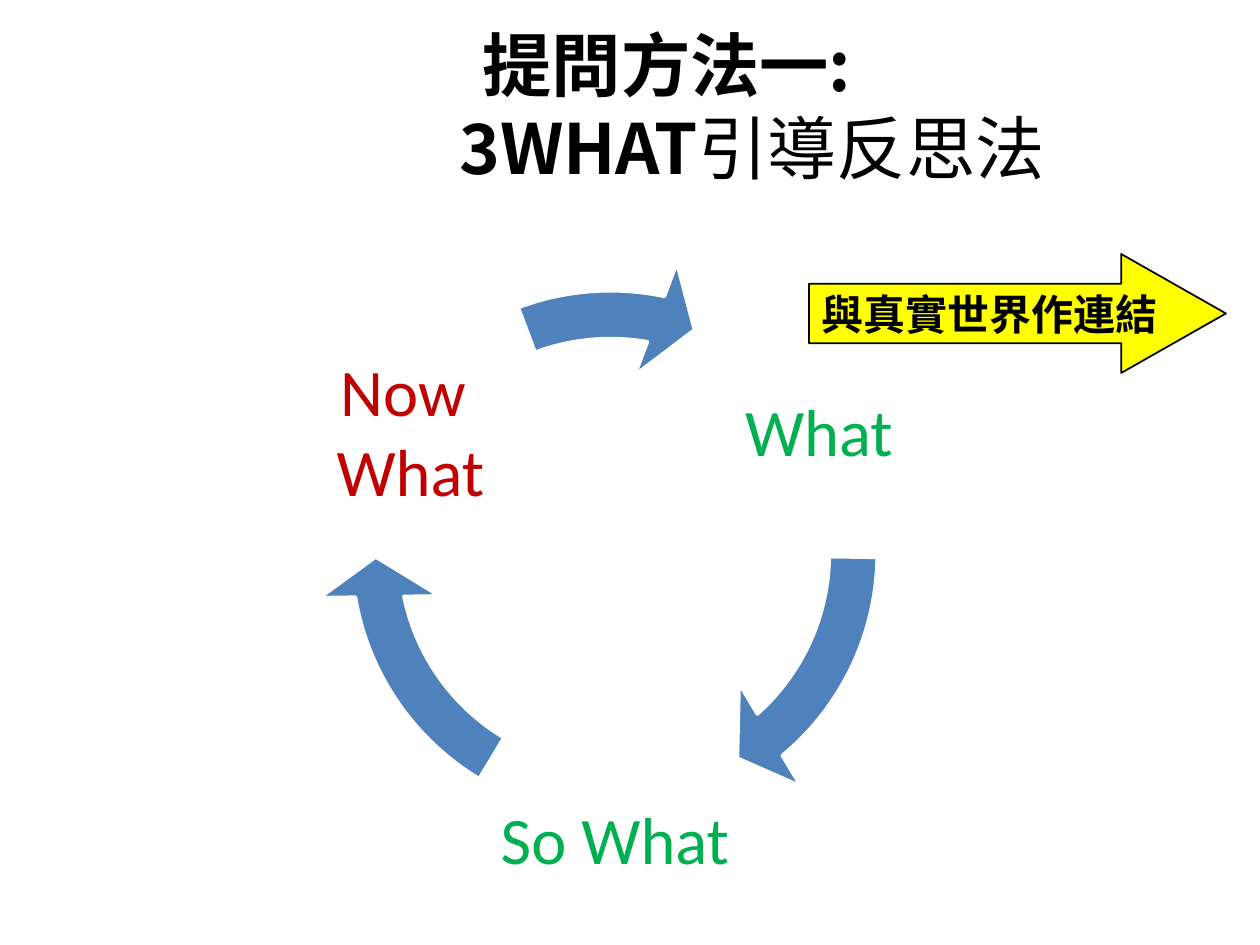
from lxml import etree
from pptx import Presentation
from pptx.dml.color import RGBColor
from pptx.enum.shapes import MSO_SHAPE
from pptx.enum.text import MSO_ANCHOR, PP_ALIGN
from pptx.oxml.ns import qn
from pptx.util import Pt

CENTER, LEFT = PP_ALIGN.CENTER, PP_ALIGN.LEFT
MIDDLE = MSO_ANCHOR.MIDDLE
CIRCULAR_ARROW, RIGHT_ARROW = MSO_SHAPE.CIRCULAR_ARROW, MSO_SHAPE.RIGHT_ARROW
PX = 914400 / 126
LATIN, CJK = "Calibri", "Noto Sans CJK SC"
COLORS = {
    "black": "000000", "white": "FFFFFF", "yellow": "FFFF00",
    "blue": "4F81BD", "green": "00B050", "red": "C00000",
}


def px(length):
    return round(length * PX)


def rgb(name):
    return RGBColor.from_string(COLORS[name])


def style_run(run, font, size, color, bold=False):
    run.font.name = font
    run.font.size = Pt(size)
    run.font.bold = bold
    run.font.color.rgb = rgb(color)
    if font == CJK:
        east_asian = etree.SubElement(run.font._element, qn("a:ea"))
        east_asian.set("typeface", CJK)


def indent(paragraph, length):
    paragraph._p.get_or_add_pPr().set("marL", str(px(length)))


def add_text_frame(slide, box):
    frame = slide.shapes.add_textbox(*map(px, box)).text_frame
    frame.word_wrap = True
    frame.vertical_anchor = MIDDLE
    return frame


def add_arrow(slide, kind, box, fill, line, width):
    arrow = slide.shapes.add_shape(kind, *map(px, box))
    arrow.shadow.inherit = False
    arrow.fill.solid()
    arrow.fill.fore_color.rgb = rgb(fill)
    arrow.line.color.rgb = rgb(line)
    arrow.line.width = Pt(width)
    return arrow


def add_title(slide, box):
    frame = add_text_frame(slide, box)
    frame.text = "提問方法一:\n3WHAT"
    method, model = frame.paragraphs
    indent(model, 170)
    model.add_run().text = "引導反思法"
    for paragraph in (method, model):
        paragraph.alignment = CENTER
        paragraph.line_spacing = Pt(47.5)
        style_run(paragraph.runs[0], CJK, 39.6, "black", bold=True)
    style_run(model.runs[1], LATIN, 39.6, "black")


def add_question(slide, box, text, color):
    frame = add_text_frame(slide, box)
    frame.margin_left = frame.margin_right = px(6)
    frame.margin_top = frame.margin_bottom = px(6)
    frame.text = text
    for paragraph in frame.paragraphs:
        paragraph.alignment = CENTER
        style_run(paragraph.runs[0], LATIN, 38, color)
    return frame


def add_cycle(slide, left, top):
    # Questions around the ring
    size = 252
    add_question(slide, (left + 416, top, size, size), "What", "green")
    add_question(slide, (left + 212, top + 408, size, size), "So What", "green")
    now_what = add_question(slide, (left, top, size, size), "Now\nWhat", "red")
    indent(now_what.paragraphs[1], 15)

    # Arc arrows: left offset, start and end angle in degrees
    ring = 597
    for offset, start, end in ((39, 0.86, 49.41), (39, 120.99, 169.55), (35, 249.45, 280.96)):
        box = (left + offset, top - 49, ring, ring)
        arc = add_arrow(slide, CIRCULAR_ARROW, box, "blue", "white", 2)
        angles = [degrees * 0.6 for degrees in (9.6, end, start)]
        for i, value in enumerate((0.08, *angles, 0.1)):
            arc.adjustments[i] = value


def add_callout(slide, box):
    callout = add_arrow(slide, RIGHT_ARROW, box, "yellow", "black", 1)
    callout.adjustments[1] = 0.88
    frame = callout.text_frame
    frame.word_wrap = False
    frame.vertical_anchor = MIDDLE
    frame.text = "與真實世界作連結"
    frame.paragraphs[0].alignment = LEFT
    style_run(frame.paragraphs[0].runs[0], CJK, 24, "black", bold=True)


def main():
    prs = Presentation()
    prs.slide_width, prs.slide_height = px(1260), px(945)
    slide = prs.slides.add_slide(prs.slide_layouts[6])
    add_title(slide, (105, 57, 1124, 97))
    add_cycle(slide, 277, 304)
    add_callout(slide, (809, 254, 417, 119))
    prs.save("out.pptx")


if __name__ == "__main__":
    main()
